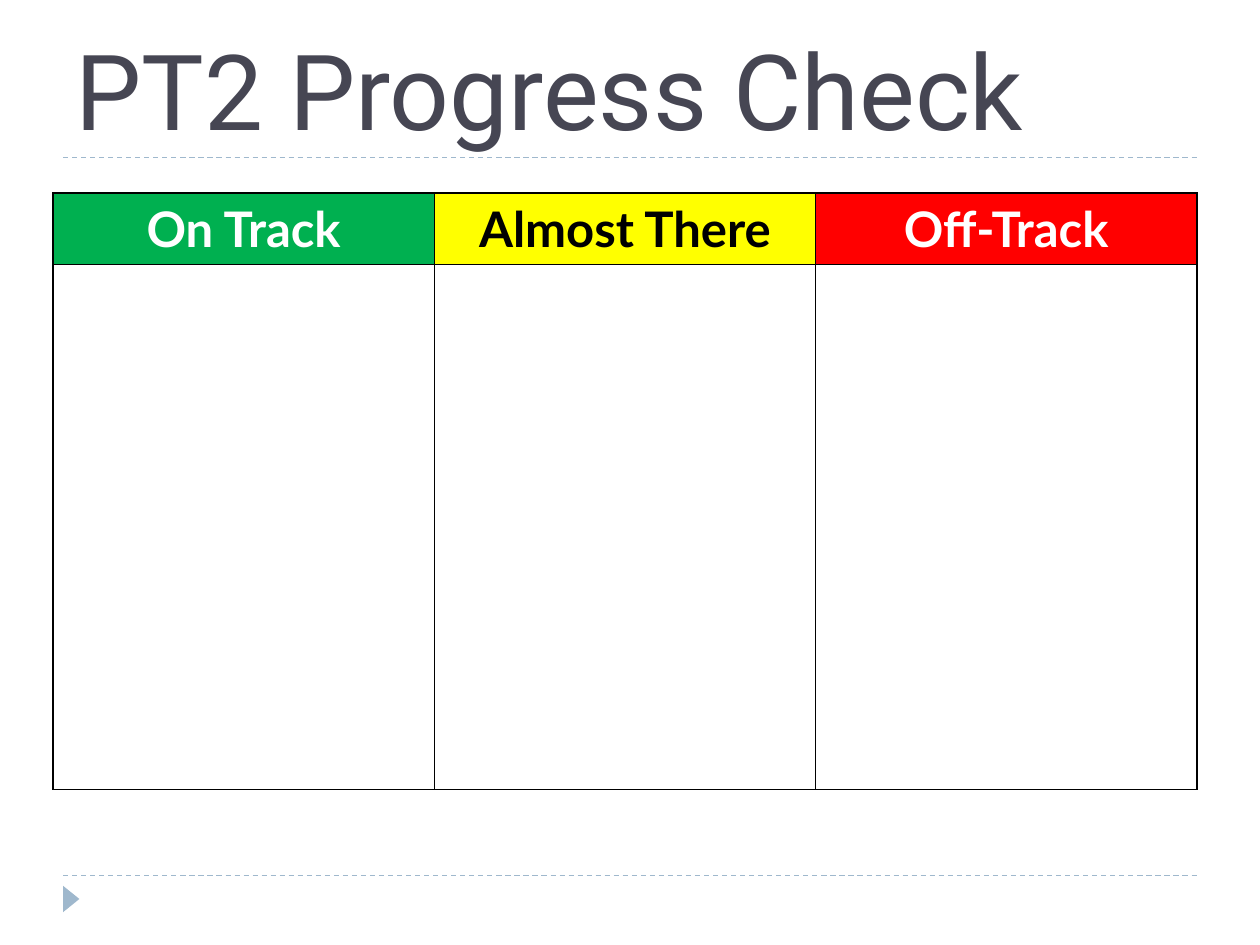
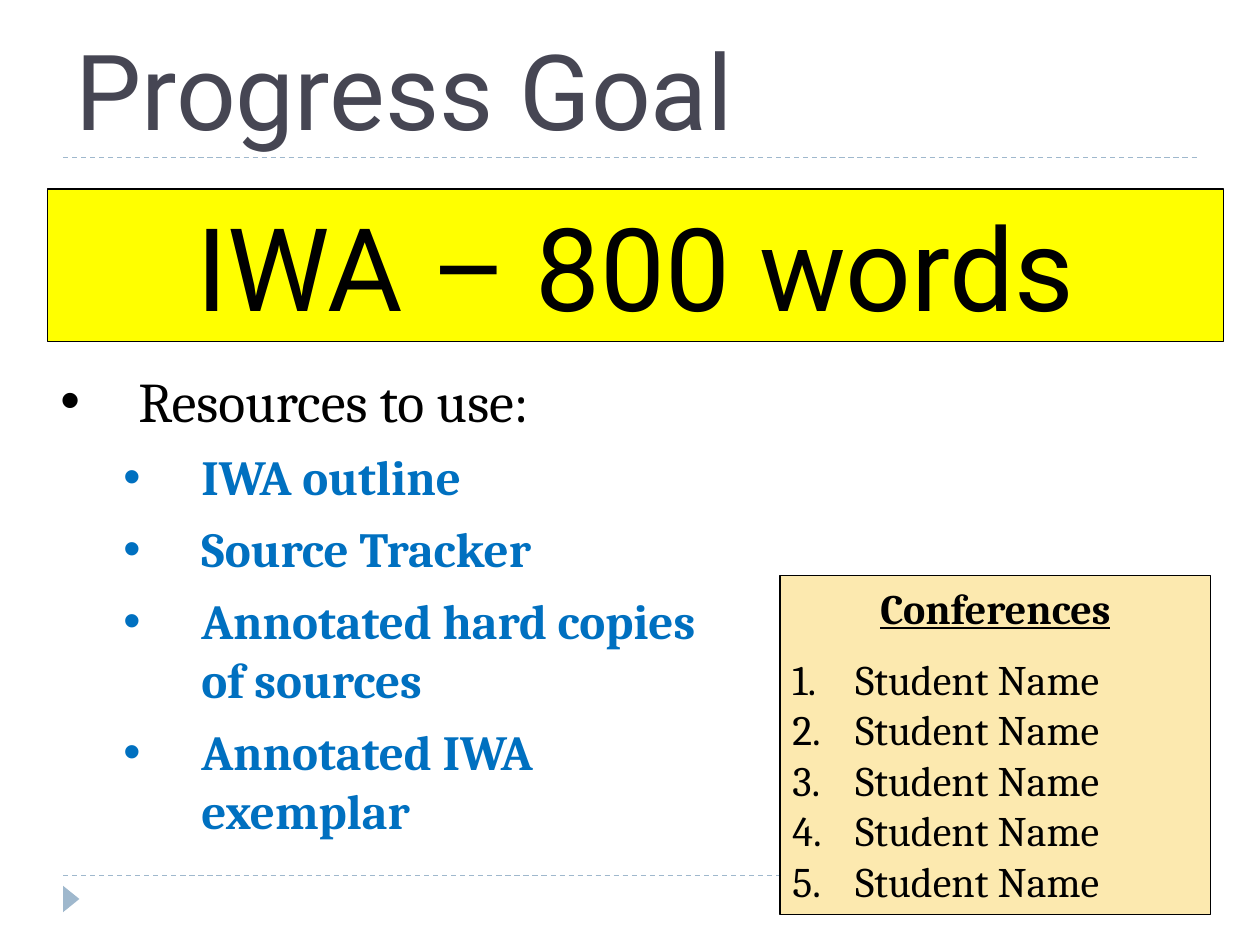
from pptx import Presentation
from pptx.dml.color import RGBColor
from pptx.enum.dml import MSO_LINE
from pptx.enum.shapes import MSO_CONNECTOR, MSO_SHAPE
from pptx.enum.text import MSO_ANCHOR, PP_ALIGN
from pptx.oxml.ns import qn
from pptx.util import Inches, Pt
from lxml.etree import SubElement as sub

# Shared colours and fonts
BLACK, WHITE, YELLOW = "000000", "FFFFFF", "FFFF00"
SLATE, MIST, BLUE, CREAM = "464653", "9FB8CD", "0070C0", "FCE9AF"
HEAD, BODY, GRID = "Roboto", "Cambria", "Lato"


def rgb(code):
    return RGBColor.from_string(code)


def add_run(para, text, font, size, color=BLACK, bold=False, under=False):
    run = para.add_run()
    run.text = text
    face = run.font
    face.name, face.size = font, Pt(size)
    face.bold, face.underline = bold, under
    face.color.rgb = rgb(color)


def add_mark(para, left, hang, char=None):
    """Hang a bullet, or a number when no character is given."""
    props = para._p.get_or_add_pPr()
    props.set("marL", str(Inches(left)))
    props.set("indent", str(-Inches(hang)))
    if char:
        sub(props, qn("a:buFont"), typeface="Arial")
        sub(props, qn("a:buChar"), char=char)
    else:
        sub(props, qn("a:buFont"), typeface="+mj-lt")
        sub(props, qn("a:buAutoNum"), type="arabicPeriod")


def add_text(slide, box):
    frame = slide.shapes.add_textbox(*map(Inches, box)).text_frame
    frame.word_wrap = True
    return frame


def add_box(slide, kind, box, fill, line=None):
    shape = slide.shapes.add_shape(kind, *map(Inches, box))
    shape.shadow.inherit = False
    shape.fill.solid()
    shape.fill.fore_color.rgb = rgb(fill)
    if line:
        shape.line.color.rgb = rgb(line)
        shape.line.width = Pt(0.75)
    else:
        shape.line.fill.background()
    return shape


def add_rule(slide, left, top, width):
    rule = slide.shapes.add_connector(
        MSO_CONNECTOR.STRAIGHT, Inches(left), Inches(top),
        Inches(left + width), Inches(top))
    rule.line.color.rgb = rgb(MIST)
    rule.line.width = Pt(0.75)
    rule.line.dash_style = MSO_LINE.DASH
    sub(rule._element.spPr, qn("a:effectLst"))


def add_page(deck, title):
    """Blank slide with the two rules, corner arrow and title."""
    slide = deck.slides.add_slide(deck.slide_layouts[6])
    for top in (6.95, 1.25):
        add_rule(slide, 0.5, top, 9)
    arrow = add_box(slide, MSO_SHAPE.ISOSCELES_TRIANGLE,
                    (0.46, 7.07, 0.21, 0.13), MIST)
    arrow.rotation = 90
    frame = add_text(slide, (0.5, 0.25, 9, 1))
    frame.vertical_anchor = MSO_ANCHOR.BOTTOM
    add_run(frame.paragraphs[0], title, HEAD, 60, SLATE)
    return slide


def edge_cell(cell):
    props = cell._tc.get_or_add_tcPr()
    for at, side in enumerate(("lnL", "lnR", "lnT", "lnB")):
        edge = props.makeelement(qn("a:" + side), {"w": str(Pt(1))})
        sub(sub(edge, qn("a:solidFill")), qn("a:srgbClr"), val=BLACK)
        props.insert(at, edge)


def add_track(slide, box, heads):
    """Status table: one coloured head per column, open cells below."""
    left, top, width, height = box
    table = slide.shapes.add_table(
        2, len(heads), *map(Inches, box)).table
    table.first_row = table.horz_banding = False
    table.rows[0].height = Inches(0.56)
    table.rows[1].height = Inches(height - 0.56)
    for col, (text, fill, color) in enumerate(heads):
        table.columns[col].width = Inches(width / len(heads))
        head, room = table.cell(0, col), table.cell(1, col)
        head.fill.solid()
        head.fill.fore_color.rgb = rgb(fill)
        room.fill.background()
        para = head.text_frame.paragraphs[0]
        para.alignment = PP_ALIGN.CENTER
        add_run(para, text, GRID, 28, color, bold=True)
        edge_cell(head)
        edge_cell(room)


def add_goal(slide, box, text):
    goal = add_box(slide, MSO_SHAPE.RECTANGLE, box, YELLOW, BLACK)
    para = goal.text_frame.paragraphs[0]
    para.alignment = PP_ALIGN.CENTER
    add_run(para, text, HEAD, 66)


def add_tools(slide, box, lead, items):
    """Lead line with bulleted items one level below."""
    frame = add_text(slide, box)
    para = frame.paragraphs[0]
    add_mark(para, 0.62, 0.62, "•")
    add_run(para, lead, BODY, 32)
    for item in items:
        para = frame.add_paragraph()
        para.level = 1
        para.space_before = Pt(7.5)
        add_mark(para, 1.12, 0.62, "•")
        add_run(para, item, BODY, 28, BLUE, bold=True)


def add_talks(slide, box, head, names):
    """Panel with a centred head over a numbered list."""
    panel = add_box(slide, MSO_SHAPE.RECTANGLE, box, CREAM, BLACK)
    frame = panel.text_frame
    frame.vertical_anchor = MSO_ANCHOR.TOP
    para = frame.paragraphs[0]
    para.alignment = PP_ALIGN.CENTER
    para.space_after = Pt(12)
    add_run(para, head, BODY, 24, bold=True, under=True)
    for name in names:
        para = frame.add_paragraph()
        para.alignment = PP_ALIGN.LEFT
        add_mark(para, 0.5, 0.5)
        add_run(para, name, BODY, 24)


def main():
    deck = Presentation()
    deck.slide_width, deck.slide_height = Inches(10), Inches(7.5)

    # Progress check
    check = add_page(deck, "PT2 Progress Check")
    add_track(check, (0.42, 1.53, 9.08, 4.73), [
        ("On Track", "00B050", WHITE),
        ("Almost There", YELLOW, BLACK),
        ("Off-Track", "FF0000", WHITE)])

    # Progress goal
    goal = add_page(deck, "Progress Goal")
    add_goal(goal, (0.38, 1.5, 9.33, 1.21), "IWA – 800 words")
    add_tools(goal, (0.38, 2.86, 5.38, 3.89), "Resources to use:", [
        "IWA outline", "Source Tracker",
        "Annotated hard copies of sources", "Annotated IWA exemplar"])
    add_talks(goal, (6.19, 4.57, 3.42, 2.69), "Conferences",
              ["Student Name"] * 5)

    deck.save("out.pptx")


if __name__ == "__main__":
    main()
